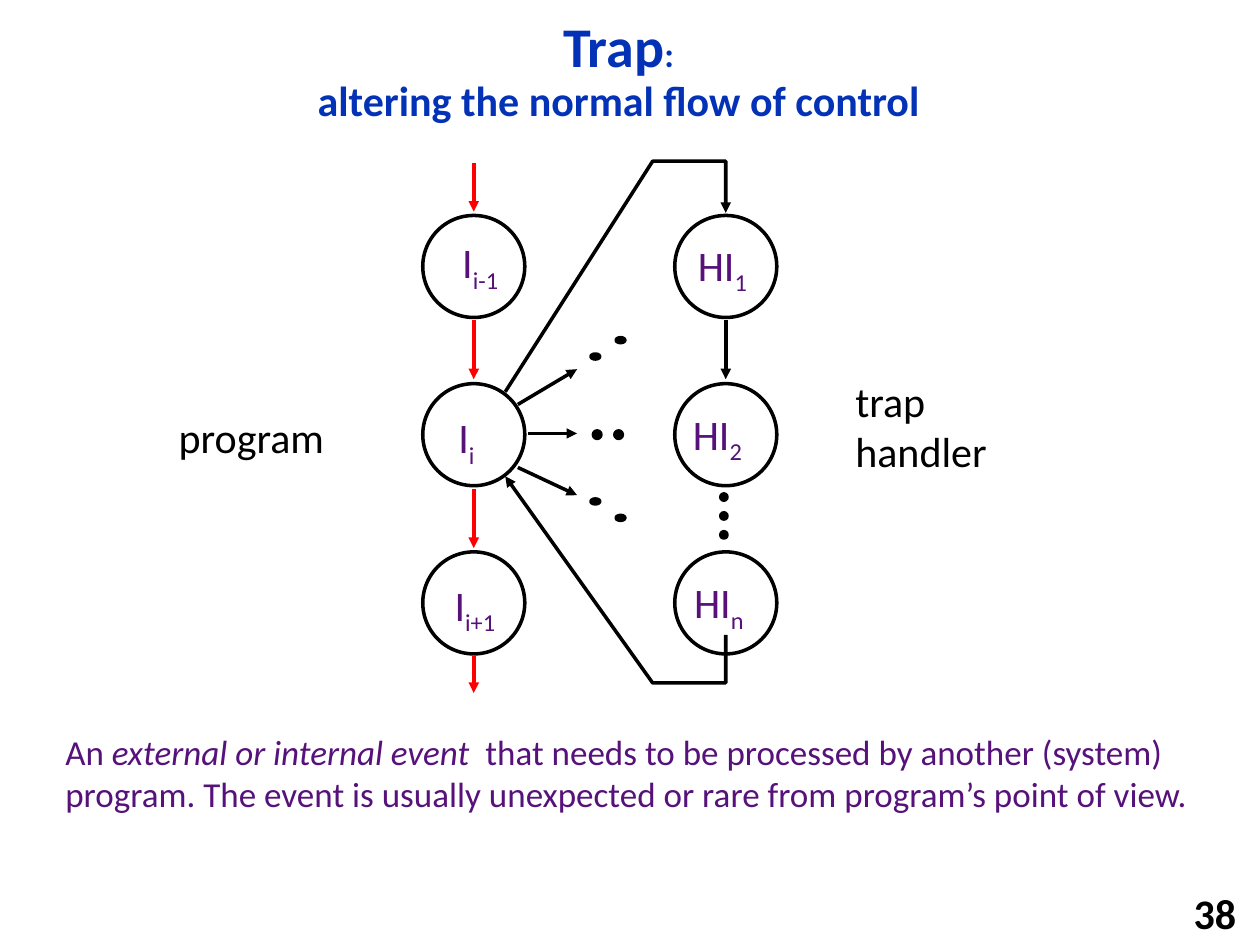
from dataclasses import dataclass

from lxml.etree import SubElement
from pptx import Presentation
from pptx.dml.color import RGBColor
from pptx.enum.shapes import MSO_CONNECTOR, MSO_SHAPE
from pptx.enum.text import MSO_ANCHOR, PP_ALIGN
from pptx.oxml.ns import qn
from pptx.util import Inches, Pt


@dataclass(frozen=True)
class Theme:
    font: str = "Calibri"
    blue: RGBColor = RGBColor(0x03, 0x32, 0xB7)
    purple: RGBColor = RGBColor(0x56, 0x12, 0x7A)
    red: RGBColor = RGBColor(0xFF, 0x00, 0x00)
    black: RGBColor = RGBColor(0x00, 0x00, 0x00)
    white: RGBColor = RGBColor(0xFF, 0xFF, 0xFF)
    title_size: Pt = Pt(32)
    label_size: Pt = Pt(24)
    body_size: Pt = Pt(20)
    line_width: Pt = Pt(2)


theme = Theme()


def add_label(bounds, lines, color, size=theme.label_size, wrap=False):
    box = slide.shapes.add_textbox(*map(Inches, bounds))
    frame = box.text_frame
    frame.word_wrap = wrap
    for index, spans in enumerate(lines):
        para = frame.paragraphs[0] if index == 0 else frame.add_paragraph()
        para.font.name = theme.font
        para.font.size = size
        para.font.color.rgb = color
        for text in spans:
            para.add_run().text = text
    return box


def style_line(shape, color, arrow=False):
    shape.line.color.rgb = color
    shape.line.width = theme.line_width
    if arrow:
        outline = shape.line._get_or_add_ln()
        SubElement(outline, qn("a:tailEnd"), type="triangle")


deck = Presentation()
deck.slide_width = Inches(10)
deck.slide_height = Inches(7.5)
slide = deck.slides.add_slide(deck.slide_layouts[5])

title = slide.shapes.title
title.left, title.top = Inches(0.92), Inches(0.17)
title.width, title.height = Inches(7.98), Inches(0.81)
title.text_frame.vertical_anchor = MSO_ANCHOR.MIDDLE
para = title.text_frame.paragraphs[0]
para.alignment = PP_ALIGN.CENTER
para.line_spacing = 0.9
para.font.name = theme.font
para.font.bold = True
para.font.color.rgb = theme.blue
for text, size in [
    ("Trap", theme.title_size),
    (":", theme.body_size),
    ("altering the normal flow of control", theme.label_size),
]:
    if size == theme.label_size:
        para.add_line_break()
    span = para.add_run()
    span.text = text
    span.font.size = size

trap_entry = [(4.01, 3.11), (5.18, 1.28), (5.76, 1.28), (5.76, 1.69)]
trap_return = [(5.76, 5.04), (5.76, 5.42), (5.18, 5.42), (4.01, 3.78)]
for route in (trap_entry, trap_return):
    points = [(Inches(x), Inches(y)) for x, y in route]
    builder = slide.shapes.build_freeform(*points[0])
    builder.add_line_segments(points[1:], close=False)
    path_shape = builder.convert_to_shape()
    path_shape.shadow.inherit = False
    path_shape.fill.background()
    style_line(path_shape, theme.black, arrow=True)

program_x, handler_x = 3.76, 5.76
diameter = 0.81
circles = [
    (x - diameter / 2, 1.71 + 1.335 * row, diameter, diameter, theme.white)
    for x in (program_x, handler_x)
    for row in range(3)
]
side_dots = [
    (x, y, 0.07, 0.04, theme.black)
    for x, y in [(4.69, 2.81), (4.89, 2.68), (4.69, 3.96), (4.89, 4.09)]
]
middle_dots = [(x, 3.42, 0.06, 0.06, theme.black) for x in (4.71, 4.88)]
handler_dots = [(5.72, 3.92 + 0.15 * step, 0.05, 0.05, theme.black) for step in range(3)]
for *bounds, color in circles + side_dots + middle_dots + handler_dots:
    ellipse = slide.shapes.add_shape(MSO_SHAPE.OVAL, *map(Inches, bounds))
    ellipse.shadow.inherit = False
    if color == theme.white:
        ellipse.fill.background()
    else:
        ellipse.fill.solid()
        ellipse.fill.fore_color.rgb = color
    style_line(ellipse, theme.black)

program_flow = [
    (program_x, start, program_x, end, theme.red)
    for start, end in [(1.29, 1.68), (2.54, 3.01), (3.88, 4.35), (5.21, 5.5)]
]
handler_flow = [(handler_x, 2.54, handler_x, 3.01, theme.black)]
other_traps = [
    (4.11, 3.21, 4.58, 2.93, theme.black),
    (4.19, 3.44, 4.58, 3.44, theme.black),
    (4.11, 3.71, 4.58, 3.93, theme.black),
]
for *ends, color in program_flow + handler_flow + other_traps:
    arrow = slide.shapes.add_connector(MSO_CONNECTOR.STRAIGHT, *map(Inches, ends))
    style_line(arrow, color, arrow=True)
    SubElement(arrow._element.spPr, qn("a:effectLst"))

for left, top, width, name, subscript in [
    (3.57, 1.83, 0.52, "I", "i-1"),
    (3.54, 3.22, 0.34, "I", "i"),
    (3.51, 4.55, 0.56, "I", "i+1"),
    (5.44, 1.85, 0.61, "HI", "1"),
    (5.4, 3.19, 0.61, "HI", "2"),
    (5.41, 4.53, 0.61, "HI", "n"),
]:
    box = add_label((left, top, width, 0.5), [[name, subscript]], theme.purple)
    span = box.text_frame.paragraphs[0].runs[1]
    span._r.get_or_add_rPr().set("baseline", "-25000")

add_label((1.32, 3.22, 1.38, 0.5), [["program"]], theme.black)
add_label((6.69, 2.93, 1.26, 0.91), [["trap"], ["handler"]], theme.black)

definition = add_label(
    (0.42, 5.75, 9.17, 1.1),
    [[
        "An ",
        "external or internal event ",
        " that needs to be processed by another (system) program. "
        "The event is usually unexpected or rare from program’s point of view.",
    ]],
    theme.purple,
    theme.body_size,
    wrap=True,
)
definition.text_frame.paragraphs[0].runs[1].font.italic = True

page_number = add_label((7.83, 7.08, 2.08, 0.32), [["38"]], theme.black)
page_number.text_frame.vertical_anchor = MSO_ANCHOR.MIDDLE
para = page_number.text_frame.paragraphs[0]
para.alignment = PP_ALIGN.RIGHT
para.font.bold = True

deck.save("out.pptx")
